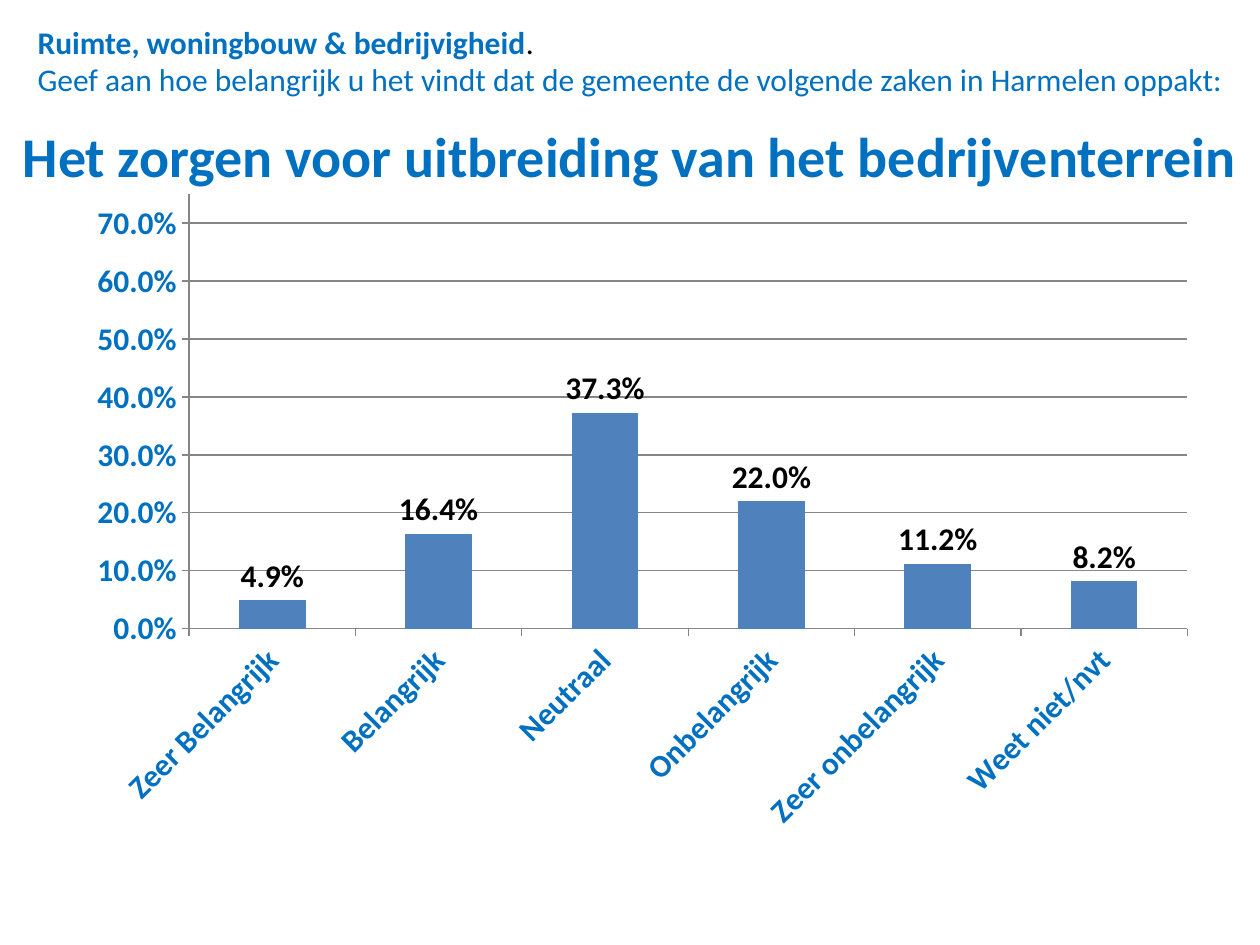
from lxml import etree
from pptx import Presentation
from pptx.chart.data import CategoryChartData
from pptx.dml.color import RGBColor
from pptx.enum import chart as ch, text
from pptx.oxml import ns
from pptx.util import Inches, Pt

COLORS = {"heading": "0070C0", "ink": "000000", "bar": "4F81BD", "grid": "868686"}
FONT = "Calibri"


def style(font, size, color, bold=False):
    font.name, font.size, font.bold = FONT, Pt(size), bold
    font.color.rgb = RGBColor.from_string(COLORS[color])


prs = Presentation()
prs.slide_width, prs.slide_height = Inches(10), Inches(7.5)
slide = prs.slides.add_slide(prs.slide_layouts[5])

# Title
title = slide.shapes.title
title.left, title.top = Inches(0), Inches(0.96)
title.width, title.height = Inches(10), Inches(0.54)
title.text_frame.text = "Het zorgen voor uitbreiding van het bedrijventerrein"
title.text_frame.vertical_anchor = text.MSO_ANCHOR.MIDDLE
title.text_frame.auto_size = text.MSO_AUTO_SIZE.NONE
title.text_frame.margin_top = title.text_frame.margin_bottom = 0
headline = title.text_frame.paragraphs[0]
headline.alignment = text.PP_ALIGN.CENTER
style(headline.runs[0].font, 32, "heading", True)

# Survey answers
answers = {
    "Zeer Belangrijk": 0.049,
    "Belangrijk": 0.164,
    "Neutraal": 0.373,
    "Onbelangrijk": 0.22,
    "Zeer onbelangrijk": 0.112,
    "Weet niet/nvt": 0.082,
}
data = CategoryChartData(number_format="0.0%")
data.categories = list(answers)
data.add_series("Series 1", list(answers.values()))
chart = slide.shapes.add_chart(
    ch.XL_CHART_TYPE.COLUMN_CLUSTERED,
    Inches(0.43), Inches(1.39), Inches(9.15), Inches(5.39), data,
).chart
chart.has_legend = chart.has_title = False
style(chart.font, 18, "ink")

for axis in (chart.category_axis, chart.value_axis):
    style(axis.tick_labels.font, 18, "heading", True)
    axis.major_tick_mark = ch.XL_TICK_MARK.OUTSIDE
    axis.minor_tick_mark = ch.XL_TICK_MARK.NONE
    axis.format.line.color.rgb = RGBColor.from_string(COLORS["grid"])
    axis.format.line.width = Pt(0.75)

label_body = chart.category_axis._element.find(f"{ns.qn('c:txPr')}/{ns.qn('a:bodyPr')}")
label_body.set("rot", "-2700000")
label_body.set("vert", "horz")

scale = chart.value_axis
scale.minimum_scale, scale.maximum_scale, scale.major_unit = 0, 0.75, 0.1
scale.tick_labels.number_format = "0.0%"
scale.tick_labels.number_format_is_linked = False
scale.has_major_gridlines = True
scale.major_gridlines.format.line.color.rgb = RGBColor.from_string(COLORS["grid"])
scale.major_gridlines.format.line.width = Pt(0.75)

plot = chart.plots[0]
plot.gap_width = 150
plot.vary_by_categories = False
bars = plot.series[0]
bars.format.fill.solid()
bars.format.fill.fore_color.rgb = RGBColor.from_string(COLORS["bar"])
labels = bars.data_labels
labels.show_value = True
labels.number_format, labels.number_format_is_linked = "0.0%", False
labels.position = ch.XL_LABEL_POSITION.OUTSIDE_END
style(labels.font, 18, "ink", True)

# Fixed inner plot area, as fractions of the chart
plot_area = chart._chartSpace.chart.plotArea
for old_layout in plot_area.findall(ns.qn("c:layout")):
    plot_area.remove(old_layout)
layout = etree.Element(ns.qn("c:layout"))
manual = etree.SubElement(layout, ns.qn("c:manualLayout"))
for tag, value in (("layoutTarget", "inner"), ("xMode", "edge"), ("yMode", "edge"),
                   ("x", "0.117"), ("y", "0.028"), ("w", "0.866"), ("h", "0.64")):
    etree.SubElement(manual, ns.qn(f"c:{tag}")).set("val", value)
plot_area.insert(0, layout)

# Survey theme and question
intro = slide.shapes.add_textbox(Inches(0.2), Inches(0.13), Inches(9.73), Inches(1.01)).text_frame
intro.word_wrap = False
intro.auto_size = text.MSO_AUTO_SIZE.SHAPE_TO_FIT_TEXT
theme, question = intro.paragraphs[0], intro.add_paragraph()
for paragraph, words, color, bold in (
    (theme, "Ruimte, woningbouw & bedrijvigheid", "heading", True),
    (theme, ".", "ink", False),
    (question, "Geef aan hoe belangrijk u het vindt dat de gemeente de volgende zaken "
               "in Harmelen oppakt:", "heading", False),
):
    run = paragraph.add_run()
    run.text = words
    style(run.font, 18, color, bold)

prs.save("out.pptx")
